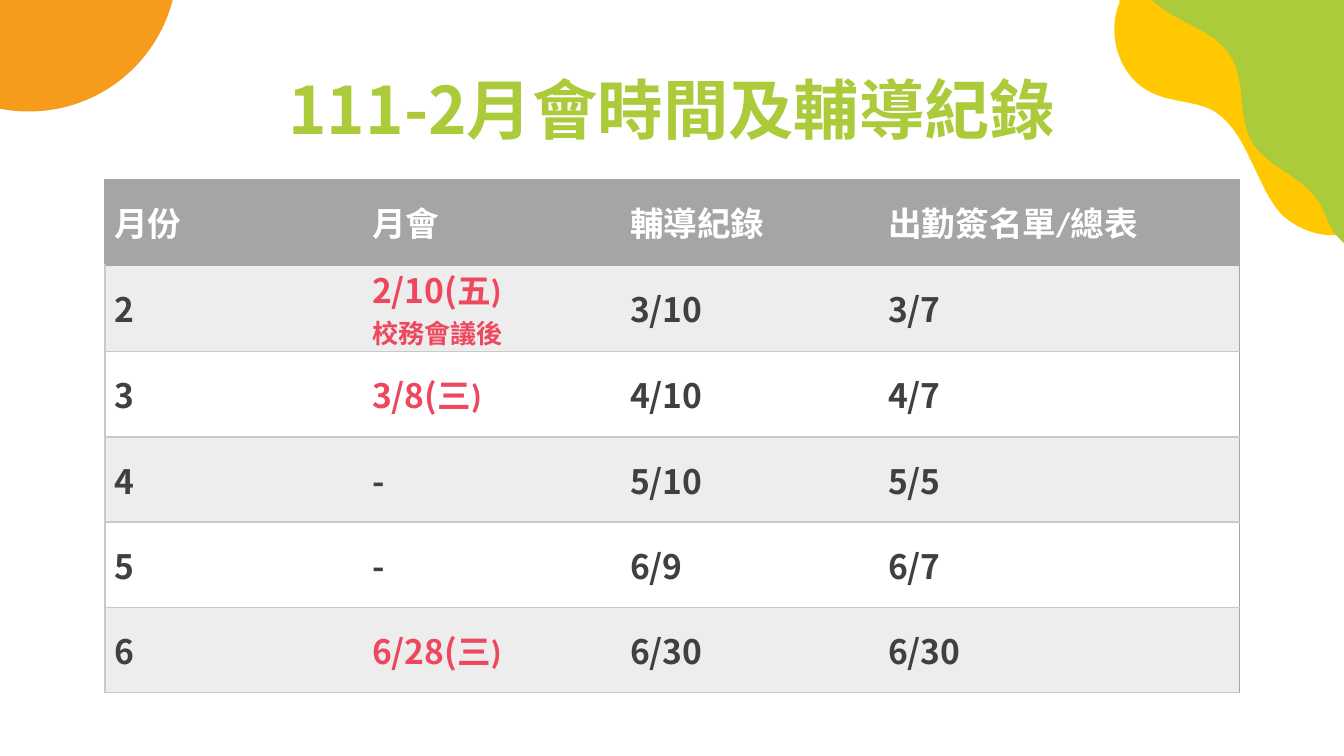
from dataclasses import dataclass

from lxml import etree
from pptx import Presentation
from pptx import util as u
from pptx.dml.color import RGBColor
from pptx.enum import shapes, text
from pptx.oxml.ns import qn

PX = 4572  # 200 px to the inch


@dataclass(frozen=True)
class Theme:
    green: str = "ABCB3B"
    yellow: str = "FFC800"
    orange: str = "F79B1D"
    red: str = "EE485E"
    ink: str = "404040"
    white: str = "FFFFFF"
    header: str = "A5A5A5"
    band: str = "EDEDED"
    rule: str = "C9C9C9"
    font: str = "Noto Sans CJK SC"
    latin: str = "Calibri"
    title_size: int = 35
    body_size: int = 18
    note_size: int = 14


theme = Theme()


def style_span(span, color, size=theme.body_size, font=theme.font):
    span.font.size = u.Pt(size)
    span.font.bold = True
    span.font.name = font
    span.font.color.rgb = RGBColor.from_string(color)
    east_asian = etree.SubElement(span.font._element, qn("a:ea"))
    east_asian.set("typeface", theme.font)


def add_wave(start, curves, corners):
    """Draw cubic curves (two controls and an end each), then straight corners."""
    builder = page.shapes.build_freeform(*start, scale=PX)
    builder.add_line_segments([point for curve in curves for point in curve] + corners)
    wave = builder.convert_to_shape()
    lines = list(wave._element.iter(qn("a:lnTo")))
    for first in range(0, 3 * len(curves), 3):
        cubic = etree.Element(qn("a:cubicBezTo"))
        lines[first].addprevious(cubic)
        for line in lines[first:first + 3]:
            cubic.append(line[0])
            line.getparent().remove(line)
    return wave


deck = Presentation()
deck.slide_width, deck.slide_height = 2000 * PX, 1125 * PX
page = deck.slides.add_slide(deck.slide_layouts[5])

# Corner decorations
yellow_wave = add_wave((1666, 0), [
    ((1666, 2), (1666, 2), (1666, 4)),
    ((1646, 52), (1666, 116), (1714, 138)),
    ((1742, 152), (1776, 150), (1804, 164)),
    ((1832, 180), (1848, 210), (1862, 240)),
    ((1876, 268), (1888, 300), (1910, 322)),
    ((1934, 342), (1962, 352), (1992, 350)),
    ((1994, 350), (1998, 348), (2000, 348)),
], [(2000, 0)])
green_wave = add_wave((2000, 0), [
    ((1950, 0), (1800, 0), (1714, 0)),
    ((1730, 14), (1750, 26), (1770, 36)),
    ((1790, 46), (1812, 58), (1826, 76)),
    ((1858, 116), (1838, 174), (1866, 216)),
    ((1888, 248), (1934, 262), (1958, 294)),
    ((1970, 310), (1974, 328), (1984, 344)),
    ((1988, 350), (1994, 356), (2000, 362)),
], [])
circle = page.shapes.add_shape(shapes.MSO_SHAPE.OVAL, -178 * PX, -276 * PX, 442 * PX, 442 * PX)
for shape, color in ((yellow_wave, theme.yellow), (green_wave, theme.green),
                     (circle, theme.orange)):
    shape.shadow.inherit = False
    shape.fill.solid()
    shape.fill.fore_color.rgb = RGBColor.from_string(color)
    shape.line.fill.background()

# Title
title = page.shapes.title
title.left, title.top, title.width, title.height = 158 * PX, 98 * PX, 1684 * PX, 126 * PX
frame = title.text_frame
frame.text = "111-2月會時間及輔導紀錄"
frame.auto_size = text.MSO_AUTO_SIZE.NONE
frame.vertical_anchor = text.MSO_ANCHOR.MIDDLE
frame.margin_left = frame.margin_right = frame.margin_top = frame.margin_bottom = 20 * PX
frame.paragraphs[0].alignment = text.PP_ALIGN.CENTER
style_span(frame.paragraphs[0].runs[0], theme.green, theme.title_size)

# Schedule: month, meeting, record due, sign-in sheet due
schedule = [
    ("月份", "月會", "輔導紀錄", "出勤簽名單/總表"),
    ("2", "2/10(五)\n校務會議後", "3/10", "3/7"),
    ("3", "3/8(三)", "4/10", "4/7"),
    ("4", "-", "5/10", "5/5"),
    ("5", "-", "6/9", "6/7"),
    ("6", "6/28(三)", "6/30", "6/30"),
]
column_widths = (384, 384, 384, 537)
row_height = 127
table = page.shapes.add_table(
    len(schedule), len(column_widths), 156 * PX, 267 * PX,
    sum(column_widths) * PX, row_height * len(schedule) * PX).table
table.first_row = table.horz_banding = False
style_id = table._tbl.tblPr.find(qn("a:tableStyleId"))
style_id.text = "{2D5ABB26-0587-4C30-8999-92F81FD0307C}"
for column, width in zip(table.columns, column_widths):
    column.width = width * PX

for r, values in enumerate(schedule):
    table.rows[r].height = row_height * PX
    is_header = r == 0
    row_rule = theme.header if is_header else theme.rule
    for c, value in enumerate(values):
        cell = table.cell(r, c)
        cell.vertical_anchor = text.MSO_ANCHOR.MIDDLE
        cell.margin_left = cell.margin_right = 14 * PX
        cell.margin_top = cell.margin_bottom = 0

        borders = {"a:lnT": theme.header if r <= 1 else theme.rule, "a:lnB": row_rule}
        if c == 0:
            borders = {"a:lnL": row_rule, **borders}
        if c == len(values) - 1:
            borders = {"a:lnR": theme.header, **borders}
        for side, color in borders.items():
            line = etree.SubElement(cell._tc.get_or_add_tcPr(), qn(side), w=str(u.Pt(1)))
            fill = etree.SubElement(line, qn("a:solidFill"))
            etree.SubElement(fill, qn("a:srgbClr"), val=color)

        if r % 2 or is_header:
            cell.fill.solid()
            cell.fill.fore_color.rgb = RGBColor.from_string(
                theme.header if is_header else theme.band)
        else:
            cell.fill.background()

        # Meeting days have a red date, then the weekday in the Latin font
        cell.text_frame.text = value
        for line_number, para in enumerate(cell.text_frame.paragraphs):
            para.alignment = text.PP_ALIGN.JUSTIFY
            date, bracket, weekday = para.text.partition("(")
            span = para.runs[0]
            span.text = date + bracket
            if is_header:
                style_span(span, theme.white, font=theme.latin)
            elif line_number:
                style_span(span, theme.red, theme.note_size, theme.latin)
            else:
                style_span(span, theme.red if bracket else theme.ink)
            if weekday:
                span = para.add_run()
                span.text = weekday
                style_span(span, theme.red, font=theme.latin)

deck.save("out.pptx")
